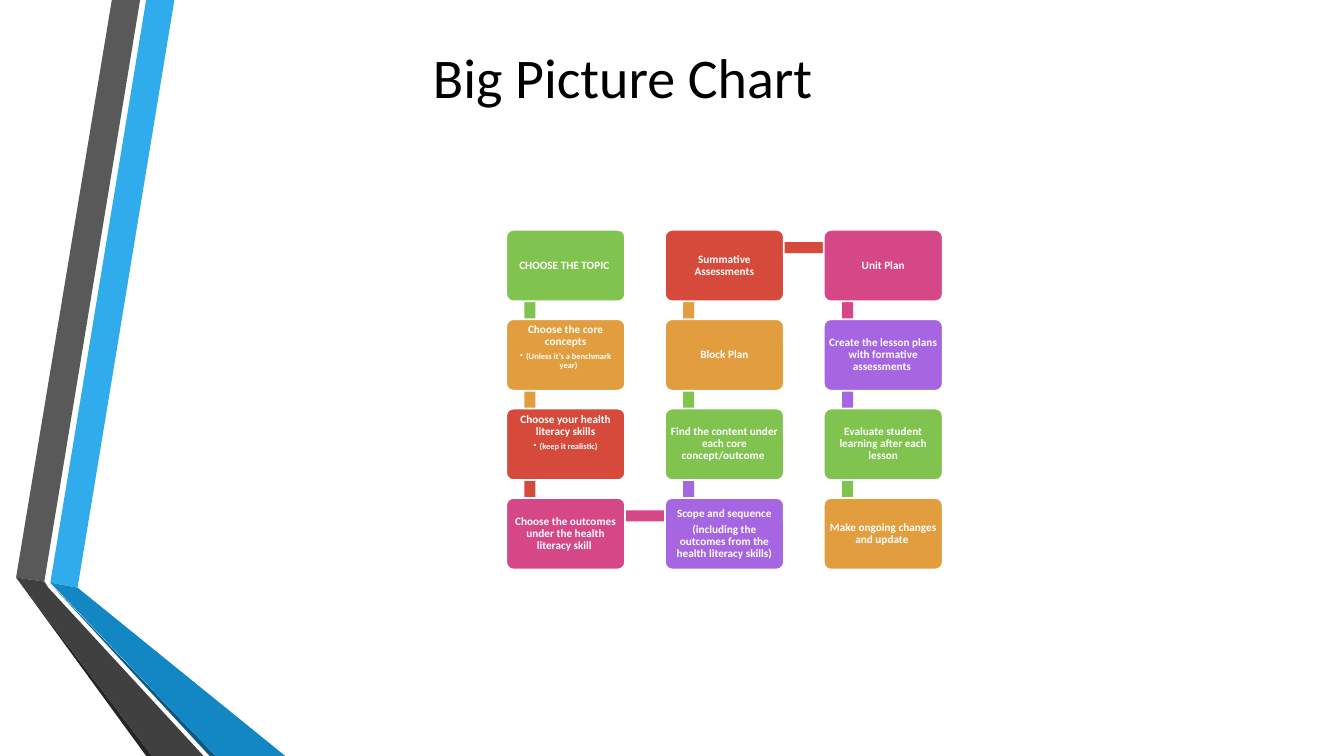
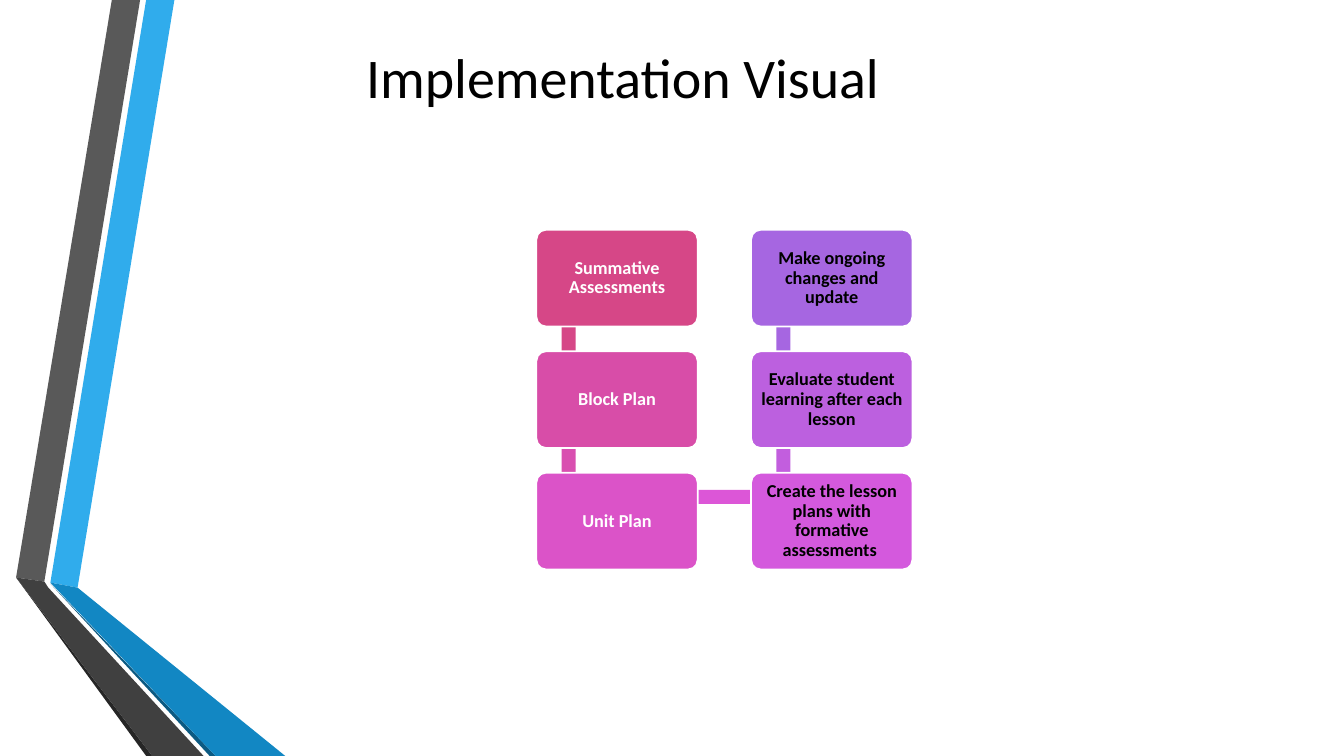
"""Builds two slides that show planning steps as snaking chains of boxes."""
from dataclasses import dataclass
from itertools import cycle

from lxml import etree
from pptx import Presentation
from pptx.dml.color import RGBColor
from pptx.enum.shapes import MSO_SHAPE
from pptx.enum.text import MSO_ANCHOR, PP_ALIGN
from pptx.oxml.ns import qn
from pptx.util import Pt

RECT, ROUND = MSO_SHAPE.RECTANGLE, MSO_SHAPE.ROUNDED_RECTANGLE
CENTER = PP_ALIGN.CENTER
TOP, MIDDLE = MSO_ANCHOR.TOP, MSO_ANCHOR.MIDDLE
PX = 9144
TITLE_ONLY = 5


@dataclass(frozen=True)
class Theme:
    """Colours and type sizes shared by the slides."""
    font: str = "Calibri"
    title_size: int = 40
    note_size: int = 6
    white: str = "FFFFFF"
    black: str = "000000"
    green: str = "80C34F"
    orange: str = "E29D3E"
    red: str = "D64A3B"
    pink: str = "D64787"
    purple: str = "A666E1"


THEME = Theme()
SLIDE_SIZE = (1333, 750)
TITLE_BOX = (171, 24, 893, 102)

RIBBONS = [
    ("30ACEC", [(50, 578), (77, 583), (173, 0), (145, 0)]),
    ("595959", [(139, 0), (111, 0), (16, 573), (44, 577)]),
    ("262626", [(16, 573), (145, 750), (151, 750)]),
    ("0C5A82", [(50, 579), (208, 750), (214, 750)]),
    ("1287C3", [(50, 578), (214, 750), (283, 750), (77, 583)]),
    ("404040", [(202, 750), (48, 583), (44, 577), (16, 573), (151, 750)]),
]

PLAN_STEPS = [
    ["CHOOSE THE TOPIC "],
    ["Choose the core concepts", "• (Unless it’s a benchmark year)"],
    ["Choose your health literacy skills", "• (keep it realistic)"],
    ["Choose the outcomes under the health literacy skill "],
    ["Scope and sequence",
     "(including the outcomes from the health literacy skills)"],
    ["Find the content under each core concept/outcome "],
    ["Block Plan"],
    ["Summative Assessments"],
    ["Unit Plan"],
    ["Create the lesson plans with formative assessments "],
    ["Evaluate student learning after each lesson"],
    ["Make ongoing changes and update "],
]
PLAN_COLORS = cycle([THEME.green, THEME.orange, THEME.red, THEME.pink, THEME.purple])

VISUAL_STEPS = [
    (["Summative Assessments"], THEME.pink, THEME.pink, THEME.white),
    (["Block Plan"], "D84DA8", "D94FB0", THEME.white),
    (["Unit Plan"], "DB53C8", "DC56D7", THEME.white),
    (["Create the lesson plans with formative assessments "],
     "D459DD", "C25EDE", THEME.black),
    (["Evaluate student learning after each lesson"],
     "BC60DF", THEME.purple, THEME.black),
    (["Make ongoing changes and update"], THEME.purple, THEME.purple, THEME.black),
]

SLIDES = [
    dict(title="Big Picture Chart", area=(502, 228, 433, 337), grid=(3, 4),
         box=(118, 71), bar=11, inset=3, size=8,
         steps=[(lines, color, color, THEME.white)
                for lines, color in zip(PLAN_STEPS, PLAN_COLORS)]),
    dict(title="Implementation Visual", area=(532, 228, 373, 337), grid=(2, 3),
         box=(160, 96), bar=14, inset=5, size=13, steps=VISUAL_STEPS),
]


def emu(*lengths):
    return [round(n * PX) for n in lengths]


def paint(sp, color):
    sp.shadow.inherit = False
    sp.fill.solid()
    sp.fill.fore_color.rgb = RGBColor.from_string(color)
    sp.line.fill.background()


def add_run(p, text, size, color, bold=False):
    p.alignment = CENTER
    r = p.add_run()
    r.text = text
    r.font.name = THEME.font
    r.font.size = Pt(size)
    r.font.bold = bold
    r.font.color.rgb = RGBColor.from_string(color)


def add_bullet(p):
    p.level = 1
    pPr = p._p.get_or_add_pPr()
    pPr.set("marL", str(6 * PX))
    pPr.set("indent", str(-6 * PX))
    etree.SubElement(pPr, qn("a:buChar"), char="•")


def add_ribbons(s, layout):
    tree = layout.element.cSld.spTree
    for i, (color, points) in enumerate(RIBBONS):
        builder = s.shapes.build_freeform(*points[0], scale=PX)
        builder.add_line_segments(points[1:], close=True)
        sp = builder.convert_to_shape()
        paint(sp, color)
        sp.element.nvSpPr.cNvPr.set("id", str(100 + i))
        tree.insert(2 + i, sp.element)


def add_title(s, text):
    sp = s.shapes.title
    sp.left, sp.top, sp.width, sp.height = emu(*TITLE_BOX)
    sp.text_frame.vertical_anchor = MIDDLE
    add_run(sp.text_frame.paragraphs[0], text, THEME.title_size, THEME.black)


def snake_spots(area, grid, box):
    left, top, width, height = area
    cols, rows = grid
    dx = (width - box[0]) / (cols - 1)
    dy = (height - box[1]) / (rows - 1)
    return [(left + c * dx, top + (rows - 1 - k if c % 2 else k) * dy)
            for c in range(cols) for k in range(rows)]


def add_bar(s, start, end, box, thick, color):
    x, y = min(start[0], end[0]), min(start[1], end[1])
    w, h = abs(end[0] - start[0]), abs(end[1] - start[1])
    place = (x + box[0] / 5 - thick / 2, y + box[1] / 4 - thick / 2)
    if w:
        place = (place[0] + thick / 2, place[1])
    else:
        place = (place[0], place[1] + thick / 2)
    sp = s.shapes.add_shape(RECT, *emu(*place, w or thick, h or thick))
    paint(sp, color)


def add_box(s, spot, box, lines, fill, color, inset, size):
    sp = s.shapes.add_shape(ROUND, *emu(*spot, *box))
    sp.adjustments[0] = 0.1
    paint(sp, fill)
    sp.line.color.rgb = RGBColor.from_string(THEME.white)
    sp.line.width = Pt(1.25)
    tf = sp.text_frame
    tf.word_wrap = True
    tf.margin_left = tf.margin_right = tf.margin_top = tf.margin_bottom = inset * PX
    tf.vertical_anchor = TOP if lines[-1].startswith("•") else MIDDLE
    for i, line in enumerate(lines):
        p = tf.add_paragraph() if i else tf.paragraphs[0]
        p.line_spacing = 0.9
        if i:
            p.space_before = Pt(3)
        noted = line.startswith("•")
        if noted:
            add_bullet(p)
        add_run(p, line.removeprefix("• "), THEME.note_size if noted else size,
                color, bold=True)


def add_chain(s, area, grid, box, bar, inset, size, steps):
    spots = snake_spots(area, grid, box)
    for i, (lines, fill, bar_color, color) in enumerate(steps):
        if i + 1 < len(spots):
            add_bar(s, spots[i], spots[i + 1], box, bar, bar_color)
        add_box(s, spots[i], box, lines, fill, color, inset, size)


def main():
    prs = Presentation()
    prs.slide_width, prs.slide_height = emu(*SLIDE_SIZE)
    layout = prs.slide_layouts[TITLE_ONLY]
    for i, content in enumerate(SLIDES):
        s = prs.slides.add_slide(layout)
        if i == 0:
            add_ribbons(s, layout)
        chain = dict(content)
        add_title(s, chain.pop("title"))
        add_chain(s, **chain)
    prs.save("out.pptx")


if __name__ == "__main__":
    main()
